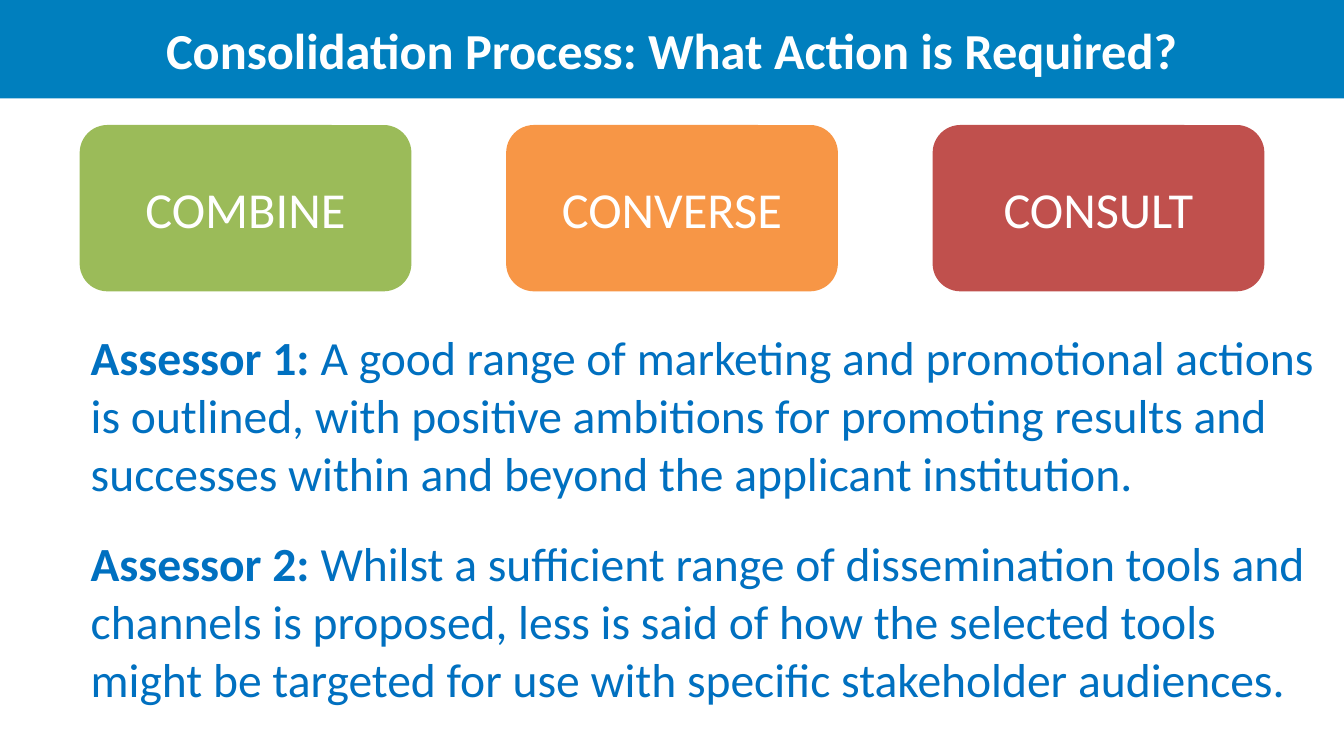
from pptx import Presentation
from pptx import util as u
from pptx.dml import color
from pptx.enum import shapes, text

WIDTH, HEIGHT = 13.33, 7.5
FONT = "Calibri"
COLORS = {
    "banner": "007FBE",
    "combine": "9BBB59",
    "converse": "F79646",
    "consult": "C0504D",
    "comment": "0070C0",
    "white": "FFFFFF",
}
ACTIONS = ["COMBINE", "CONVERSE", "CONSULT"]
COMMENTS = [
    ("Assessor 1: ",
     "A good range of marketing and promotional actions is outlined, with positive "
     "ambitions for promoting results and successes within and beyond the applicant "
     "institution."),
    ("Assessor 2: ",
     "Whilst a sufficient range of dissemination tools and channels is proposed, less "
     "is said of how the selected tools might be targeted for use with specific "
     "stakeholder audiences."),
]


def rgb(name):
    return color.RGBColor.from_string(COLORS[name])


def inches(box):
    return [u.Inches(length) for length in box]


def add_run(paragraph, wording, size, ink, bold=False):
    run = paragraph.add_run()
    run.text = wording
    run.font.name = FONT
    run.font.size = u.Pt(size)
    run.font.bold = bold
    run.font.color.rgb = rgb(ink)


def add_panel(slide, box, preset, fill, label, bold=False):
    panel = slide.shapes.add_shape(preset, *inches(box))
    panel.shadow.inherit = False
    panel.fill.solid()
    panel.fill.fore_color.rgb = rgb(fill)
    panel.line.fill.background()
    panel.text_frame.word_wrap = True
    panel.text_frame.vertical_anchor = text.MSO_ANCHOR.MIDDLE
    paragraph = panel.text_frame.paragraphs[0]
    paragraph.alignment = text.PP_ALIGN.CENTER
    add_run(paragraph, label, 36, "white", bold)


def add_banner(slide, box):
    add_panel(slide, box, shapes.MSO_SHAPE.RECTANGLE, "banner",
              "Consolidation Process: What Action is Required?", True)


def add_actions(slide, box):
    left, top, width, height = box
    card = width * 0.28
    pitch = (width - card) / (len(ACTIONS) - 1)
    for column, action in enumerate(ACTIONS):
        add_panel(slide, (left + column * pitch, top, card, height),
                  shapes.MSO_SHAPE.ROUNDED_RECTANGLE, action.lower(), action)


def add_comments(slide, box):
    table = slide.shapes.add_table(1, 1, *inches(box)).table
    table.first_row = False
    table.horz_banding = False
    cell = table.cell(0, 0)
    cell.fill.background()
    cell.margin_left = cell.margin_right = u.Inches(0.12)
    cell.margin_top = cell.margin_bottom = 0
    for row, (assessor, comment) in enumerate(COMMENTS):
        if row:
            paragraph = cell.text_frame.add_paragraph()
            paragraph.space_before = u.Pt(23)
        else:
            paragraph = cell.text_frame.paragraphs[0]
        add_run(paragraph, assessor, 34, "comment", True)
        add_run(paragraph, comment, 34, "comment")


def main():
    deck = Presentation()
    deck.slide_width, deck.slide_height = inches((WIDTH, HEIGHT))
    slide = deck.slides.add_slide(deck.slide_layouts[6])
    add_banner(slide, (0, 0, WIDTH, HEIGHT * 0.13))
    add_actions(slide, (0.79, 1.24, 11.75, HEIGHT * 0.22))
    add_comments(slide, (0.78, 3.28, 12.43, 3.7))
    deck.save("out.pptx")


if __name__ == "__main__":
    main()
